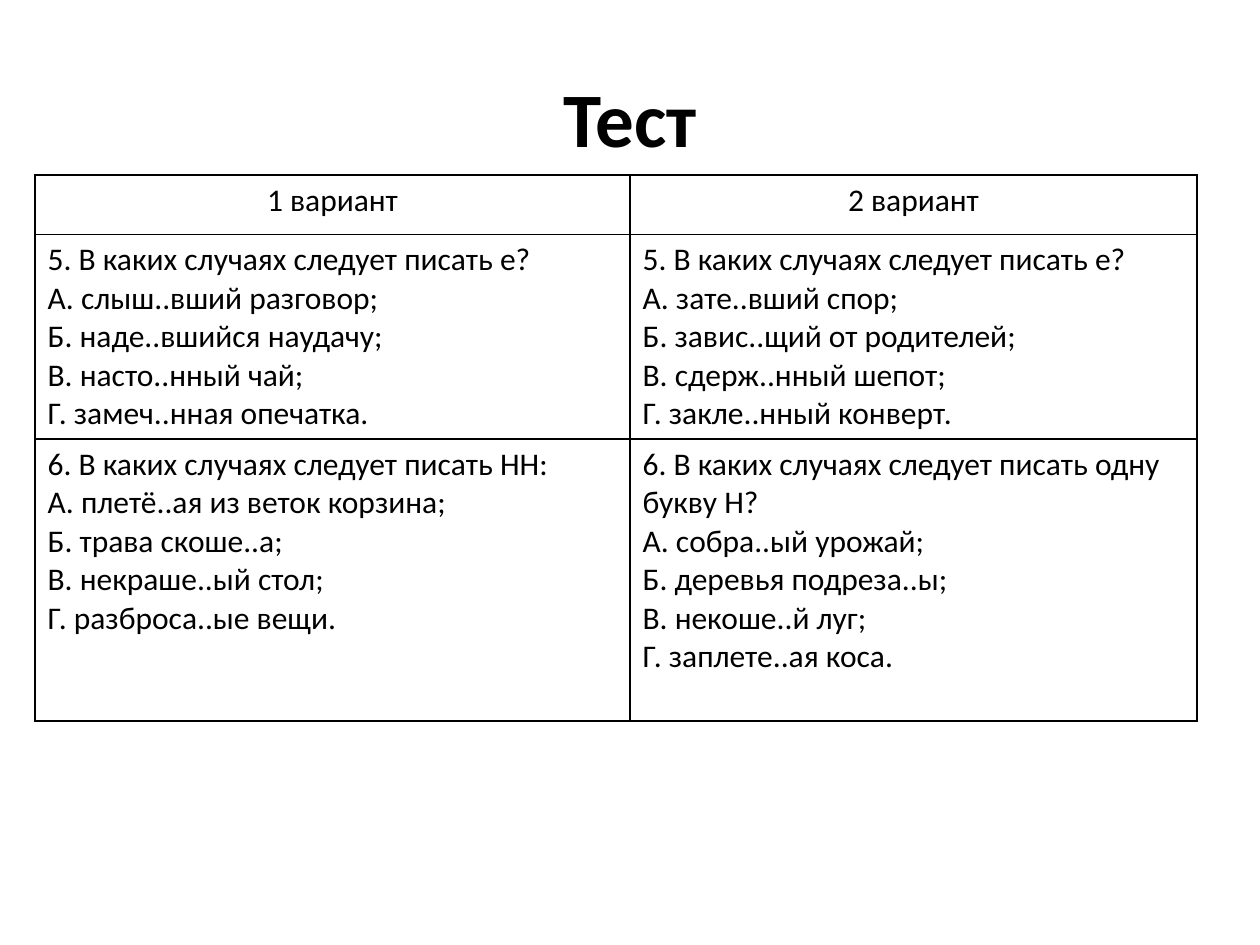
"""Build a test slide with two variants of grammar questions."""
from lxml.etree import SubElement
from pptx import Presentation
from pptx.dml.color import RGBColor
from pptx.enum.text import MSO_ANCHOR, PP_ALIGN as Align
from pptx.oxml.ns import qn
from pptx.util import Pt

COLORS = {"text": "000000", "border": "000000", "cell": "FFFFFF"}
COLUMN_WIDTHS = [340, 324]
ROW_HEIGHTS = [34, 117, 161]
VARIANTS = [
    [["1 вариант"], ["2 вариант"]],
    [
        ["5. В каких случаях следует писать е?", "A. слыш..вший разговор;",
         "Б. наде..вшийся наудачу;", "B. насто..нный чай;",
         "Г. замеч..нная опечатка."],
        ["5. В каких случаях следует писать е?", "A. зате..вший спор;",
         "Б. завис..щий от родителей;", "B. сдерж..нный шепот;",
         "Г. закле..нный конверт."],
    ],
    [
        ["6. В каких случаях следует писать НН:", "A. плетё..ая из веток корзина;",
         "Б. трава скоше..а;", "B. некраше..ый стол;",
         "Г. разброса..ые вещи."],
        ["6. В каких случаях следует писать одну букву Н?", "A. собра..ый урожай;",
         "Б. деревья подреза..ы;", "B. некоше..й луг;",
         "Г. заплете..ая коса."],
    ],
]


def write(frame, lines, size, align, bold=False):
    for index, line in enumerate(lines):
        paragraph = frame.add_paragraph() if index else frame.paragraphs[0]
        paragraph.alignment = align
        run = paragraph.add_run()
        run.text = line
        run.font.name = "Calibri"
        run.font.size = Pt(size)
        run.font.bold = bold
        run.font.color.rgb = RGBColor.from_string(COLORS["text"])


def outline(cell):
    properties = cell._tc.get_or_add_tcPr()
    for side in ("a:lnL", "a:lnR", "a:lnT", "a:lnB"):
        line = SubElement(properties, qn(side), w=str(Pt(1)))
        fill = SubElement(line, qn("a:solidFill"))
        SubElement(fill, qn("a:srgbClr"), val=COLORS["border"])


prs = Presentation()
prs.slide_width, prs.slide_height = Pt(720), Pt(540)
slide = prs.slides.add_slide(prs.slide_layouts[6])

title = slide.shapes.add_textbox(Pt(36), Pt(21.6), Pt(648), Pt(90)).text_frame
title.word_wrap = True
title.vertical_anchor = MSO_ANCHOR.MIDDLE
write(title, ["Тест"], 44, Align.CENTER, bold=True)

questions = slide.shapes.add_table(
    len(ROW_HEIGHTS), len(COLUMN_WIDTHS), Pt(20), Pt(100),
    Pt(sum(COLUMN_WIDTHS)), Pt(sum(ROW_HEIGHTS))).table
questions.first_row = False
questions.horz_banding = False
for column, width in zip(questions.columns, COLUMN_WIDTHS):
    column.width = Pt(width)
for row, height in zip(questions.rows, ROW_HEIGHTS):
    row.height = Pt(height)

for row_index, variants in enumerate(VARIANTS):
    for column_index, lines in enumerate(variants):
        cell = questions.cell(row_index, column_index)
        outline(cell)
        cell.fill.solid()
        cell.fill.fore_color.rgb = RGBColor.from_string(COLORS["cell"])
        write(cell.text_frame, lines, 18, Align.LEFT if row_index else Align.CENTER)

prs.save("out.pptx")
